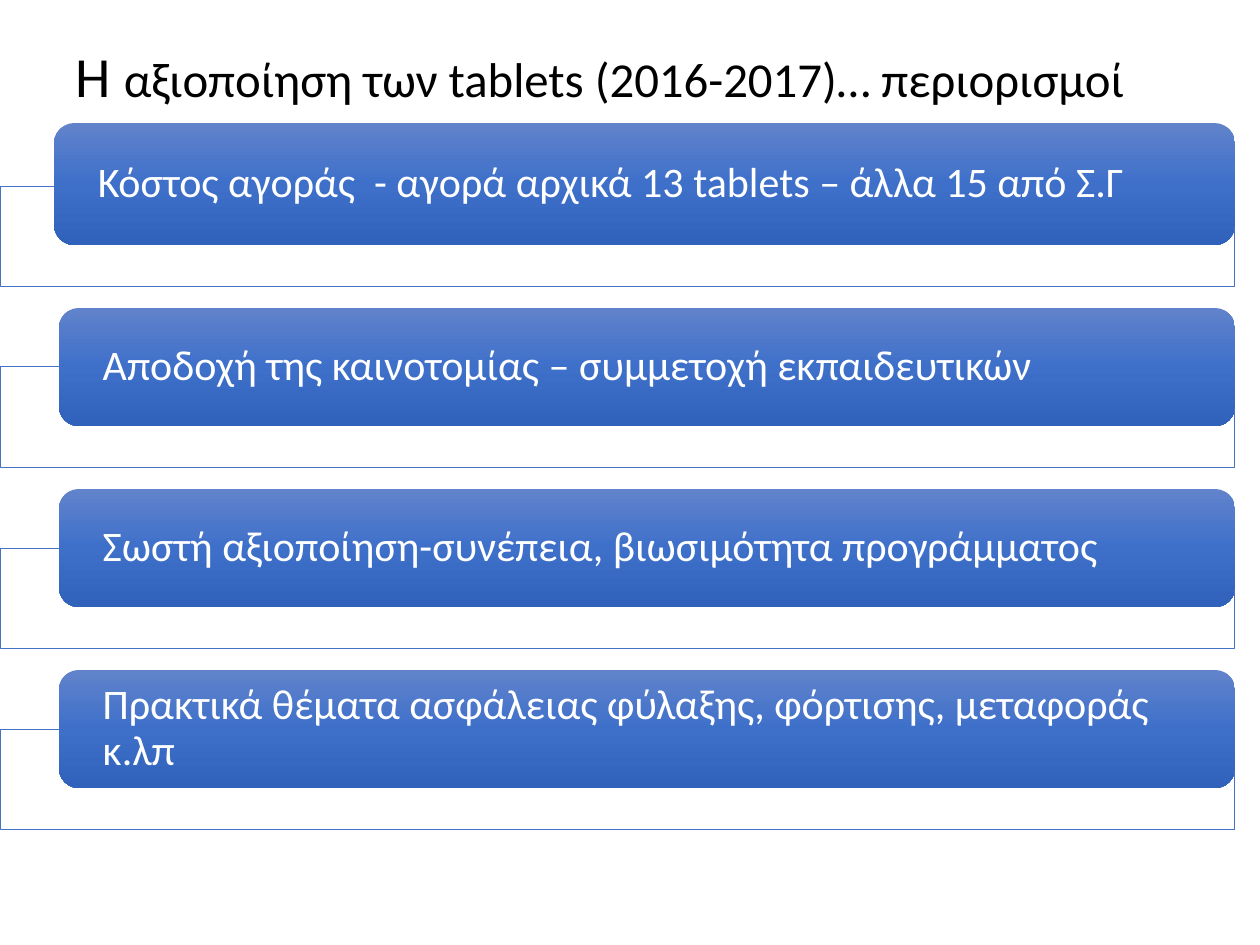
import copy

import pptx
import pptx.dml.color
import pptx.enum.shapes
import pptx.enum.text
import pptx.oxml
import pptx.oxml.ns
import pptx.util

SCALE = 914400 / 126  # EMU per px
KIND = pptx.enum.shapes.MSO_SHAPE
LEFT = pptx.enum.text.PP_ALIGN.LEFT
THEME = {
    "font": "Calibri",
    "title": "000000",
    "text": "FFFFFF",
    "panel": "FFFFFF",
    "line": "4472C4",
    "grad": [(0, "6183CB"), (0.5, "3E70CA"), (1, "3062BB")],
    "big": 32.4,
    "head": 27.9,
    "body": 24,
}


def px(*vals):
    return [round(val * SCALE) for val in vals]


def write(par, text, size, tint):
    par.alignment, par.line_spacing = LEFT, 0.9
    run = par.add_run()
    run.text = text
    look = {"name": THEME["font"], "size": pptx.util.Pt(size)}
    for key, val in look.items():
        setattr(run.font, key, val)
    run.font.color.rgb = pptx.dml.color.RGBColor.from_string(THEME[tint])


deck = pptx.Presentation()
deck.slide_width, deck.slide_height = px(1260, 945)
slide = deck.slides.add_slide(deck.slide_layouts[5])

# Title
title = slide.shapes.title
title.left, title.top, title.width, title.height = px(63, 45, 1134, 69)
frame = title.text_frame
form = {
    "auto_size": pptx.enum.text.MSO_AUTO_SIZE.NONE,
    "vertical_anchor": pptx.enum.text.MSO_ANCHOR.MIDDLE,
    "word_wrap": True,
}
for key, val in form.items():
    setattr(frame, key, val)
write(frame.paragraphs[0], "Η ", THEME["big"], "title")
write(frame.paragraphs[0], "αξιοποίηση των tablets (2016-2017)… περιορισμοί",
      THEME["head"], "title")

# Limits: an outlined panel with a bar over its top edge
limits = [
    "Κόστος αγοράς  - αγορά αρχικά 13 tablets – άλλα 15 από Σ.Γ",
    "Αποδοχή της καινοτομίας – συμμετοχή εκπαιδευτικών",
    "Σωστή αξιοποίηση-συνέπεια, βιωσιμότητα προγράμματος",
    "Πρακτικά θέματα ασφάλειας φύλαξης, φόρτισης, μεταφοράς κ.λπ",
]
EDGE, STEP = 1235, 181
side, none = px(38, 0)
inset = {"margin_left": side, "margin_right": side,
         "margin_top": none, "margin_bottom": none}

for row, text in enumerate(limits):
    top = 186 + row * STEP

    # Panel
    panel = slide.shapes.add_shape(KIND.RECTANGLE, *px(0, top, EDGE, 101))
    panel.shadow.inherit = False
    panel.fill.solid()
    panel.fill.fore_color.rgb = pptx.dml.color.RGBColor.from_string(THEME["panel"])
    tone = panel.element.spPr.find(".//" + pptx.oxml.ns.qn("a:srgbClr"))
    tone.append(pptx.oxml.parse_xml(
        "<a:alpha %s val='90000'/>" % pptx.oxml.ns.nsdecls("a")))
    panel.line.color.rgb = pptx.dml.color.RGBColor.from_string(THEME["line"])
    panel.line.width = pptx.util.Pt(0.5)

    # Bar: the first one is a little larger
    left, rise, high = (54, 63, 122) if row == 0 else (59, 59, 118)
    bar = slide.shapes.add_shape(
        KIND.ROUNDED_RECTANGLE, *px(left, top - rise, EDGE - left, high))
    bar.shadow.inherit = False
    bar.line.fill.background()
    bar.fill.gradient()
    bar.fill.gradient_angle = 270
    stops = bar.element.spPr.find(".//" + pptx.oxml.ns.qn("a:gsLst"))
    stops.insert(1, copy.deepcopy(stops[0]))
    for stop, (place, tint) in zip(bar.fill.gradient_stops, THEME["grad"]):
        stop.position = place
        stop.color.rgb = pptx.dml.color.RGBColor.from_string(tint)

    # Bar text
    frame = bar.text_frame
    for key, val in (form | inset).items():
        setattr(frame, key, val)
    write(frame.paragraphs[0], text, THEME["body"], "text")

deck.save("out.pptx")
